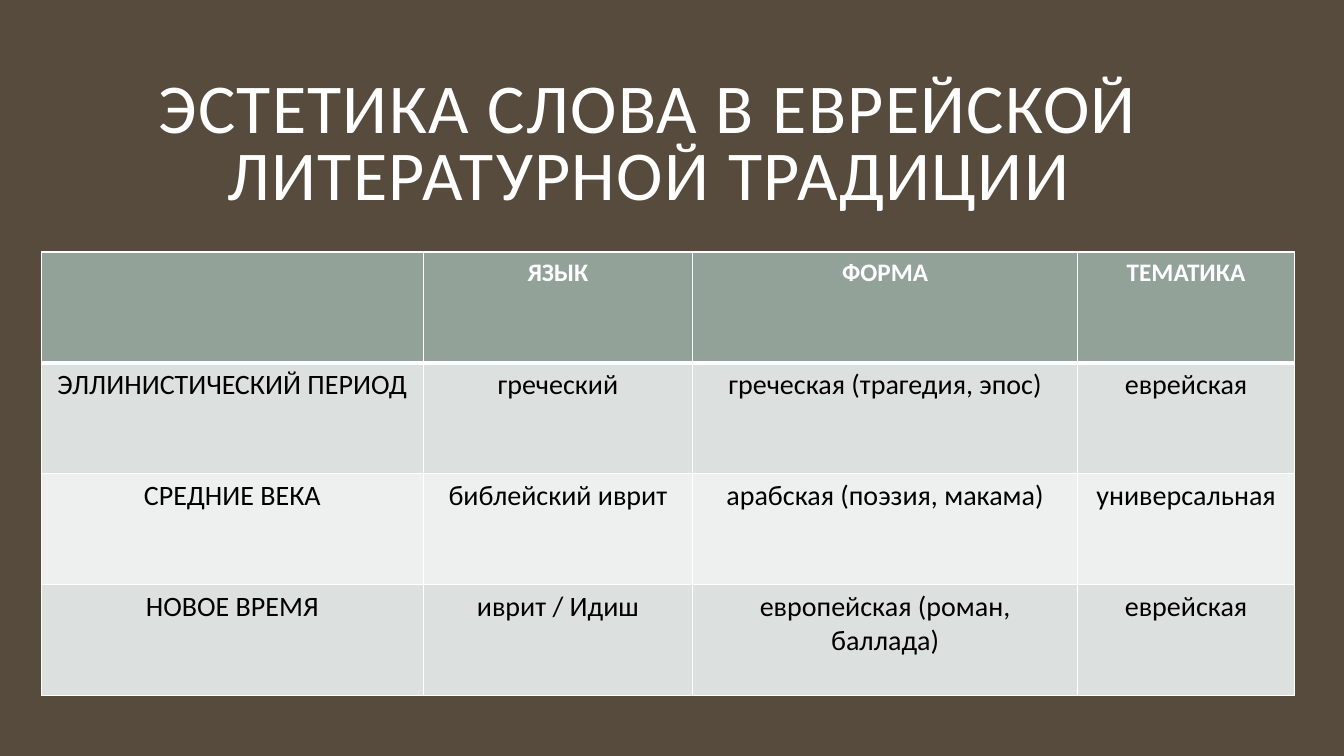
from lxml.etree import SubElement
from pptx import Presentation
from pptx.dml.color import RGBColor
from pptx.enum.text import MSO_ANCHOR, MSO_AUTO_SIZE, PP_ALIGN
from pptx.oxml.ns import qn
from pptx.util import Inches, Pt

BROWN = RGBColor(0x56, 0x4B, 0x3C)
WHITE = RGBColor(0xFF, 0xFF, 0xFF)
BLACK = RGBColor(0x00, 0x00, 0x00)
SAGE = RGBColor(0x93, 0xA2, 0x99)
BAND_DARK = RGBColor(0xDC, 0xE0, 0xDE)
BAND_LIGHT = RGBColor(0xEE, 0xF0, 0xEF)

TITLE = "ЭСТЕТИКА СЛОВА В ЕВРЕЙСКОЙ ЛИТЕРАТУРНОЙ ТРАДИЦИИ"
PERIODS = [
    ["", "ЯЗЫК", "ФОРМА", "ТЕМАТИКА"],
    ["ЭЛЛИНИСТИЧЕСКИЙ ПЕРИОД", "греческий", "греческая (трагедия, эпос)", "еврейская"],
    ["СРЕДНИЕ ВЕКА", "библейский иврит", "арабская (поэзия, макама)", "универсальная"],
    ["НОВОЕ ВРЕМЯ", "иврит / Идиш", "европейская (роман, баллада)", "еврейская"],
]
COLUMN_WIDTHS = [3.79, 2.67, 3.82, 2.15]
ROW_HEIGHT = 1.1

TITLE_FORMAT = {"name": "Calibri", "size": Pt(50), "bold": False}
HEADER_FORMAT = {"name": "Calibri", "size": Pt(18), "bold": True}
BODY_FORMAT = {"name": "Calibri", "size": Pt(20), "bold": False}


def write(frame, text, formats, color):
    """Put one centred, formatted span in a text frame and return its paragraph."""
    para = frame.paragraphs[0]
    para.alignment = PP_ALIGN.CENTER
    span = para.add_run()
    span.text = text
    for name, value in formats.items():
        setattr(span.font, name, value)
    span.font.color.rgb = color
    return para


def add_title(page):
    """Place and format the title placeholder."""
    box = page.shapes.title
    place = {"left": 1.12, "top": 0.64, "width": 10.63, "height": 1.64}
    for name, value in place.items():
        setattr(box, name, Inches(value))
    frame = box.text_frame
    frame.word_wrap = True
    frame.auto_size = MSO_AUTO_SIZE.NONE
    frame.vertical_anchor = MSO_ANCHOR.MIDDLE
    para = write(frame, TITLE, TITLE_FORMAT, WHITE)
    para.line_spacing = 0.8
    para.runs[0].font._element.set("spc", "100")


def add_borders(cell, widths):
    """Draw white cell borders with the given width in points per side."""
    properties = cell._tc.get_or_add_tcPr()
    for side, width in widths.items():
        line = SubElement(properties, qn(f"a:ln{side}"), w=str(Pt(width)))
        fill = SubElement(line, qn("a:solidFill"))
        SubElement(fill, qn("a:srgbClr"), val=str(WHITE))


def add_period_table(page):
    """Build the table of periods with a header and banded rows."""
    frame = page.shapes.add_table(
        len(PERIODS), len(COLUMN_WIDTHS), Inches(0.41), Inches(2.5),
        Inches(sum(COLUMN_WIDTHS)), Inches(ROW_HEIGHT * len(PERIODS)))
    table = frame.table
    for column, width in zip(table.columns, COLUMN_WIDTHS):
        column.width = Inches(width)
    for index, texts in enumerate(PERIODS):
        table.rows[index].height = Inches(ROW_HEIGHT)
        header = index == 0
        band = SAGE if header else BAND_DARK if index % 2 else BAND_LIGHT
        widths = {"L": 1, "R": 1, "T": 3 if index == 1 else 1, "B": 3 if header else 1}
        for cell, text in zip(table.rows[index].cells, texts):
            add_borders(cell, widths)
            cell.fill.solid()
            cell.fill.fore_color.rgb = band
            if text:
                write(cell.text_frame, text, HEADER_FORMAT if header else BODY_FORMAT,
                      WHITE if header else BLACK)


def main():
    """Create the deck with its single page and save it."""
    deck = Presentation()
    deck.slide_width, deck.slide_height = Inches(13.33), Inches(7.5)
    page = deck.slides.add_slide(deck.slide_layouts[5])
    page.background.fill.solid()
    page.background.fill.fore_color.rgb = BROWN
    add_title(page)
    add_period_table(page)
    deck.save("out.pptx")


if __name__ == "__main__":
    main()
